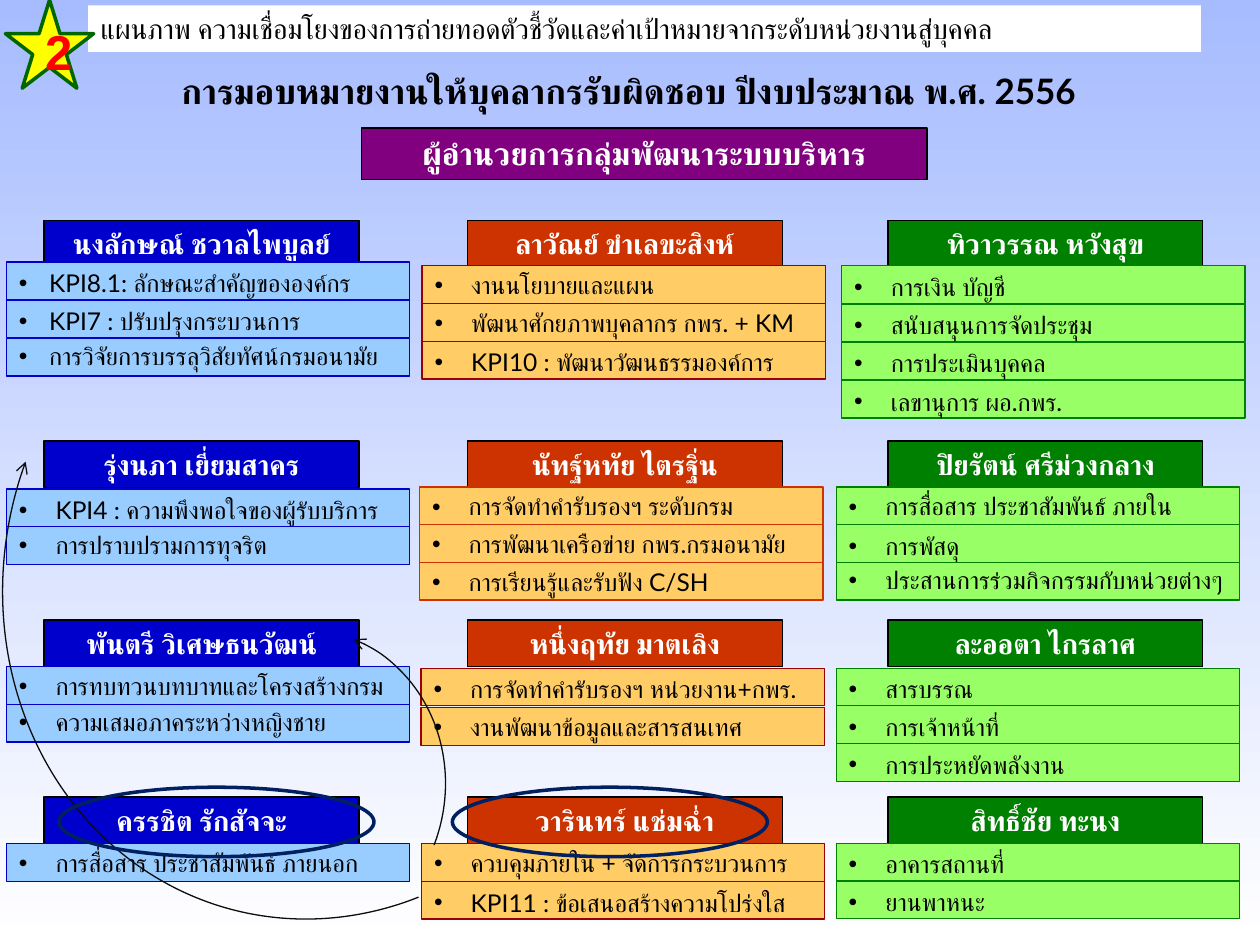
from lxml import etree
from pptx import Presentation
from pptx.dml.color import RGBColor as RGB
from pptx.enum.shapes import MSO_SHAPE as Kind
from pptx.enum.text import MSO_ANCHOR as Anchor, PP_ALIGN as Align
from pptx.oxml.ns import qn
from pptx.util import Cm, Pt

BLACK = RGB(0, 0, 0)
WHITE = RGB(255, 255, 255)
SKY = RGB(0xA7, 0xBC, 0xFF)
PURPLE = RGB(0x80, 0, 0x80)
BLUE = RGB(0, 0, 0xCC)
PALE = RGB(0x99, 0xCC, 0xFF)
RUST = RGB(0xCC, 0x33, 0)
WINE = RGB(0x99, 0, 0)
AMBER = RGB(0xFF, 0xCC, 0x66)
GREEN = RGB(0, 0x80, 0)
LIME = RGB(0x99, 0xFF, 0x66)
NAVY = RGB(0, 0x20, 0x60)
INK = RGB(0x0D, 0x0D, 0x0D)
YELLOW = RGB(255, 255, 0)
RED = RGB(255, 0, 0)
PINE = RGB(0, 0x66, 0)

prs = Presentation()
prs.slide_width, prs.slide_height = Cm(25.4), Cm(19.05)
slide = prs.slides.add_slide(prs.slide_layouts[6])
back = slide.background.fill
back.gradient()
back.gradient_angle = 270
for stop, tint in zip(back.gradient_stops, (SKY, WHITE)):
    stop.color.rgb = tint


def draw(kind, at, fill=None, line=None, width=0.75):
    shape = slide.shapes.add_shape(kind, *[Cm(v) for v in at])
    shape.shadow.inherit = False
    if fill is None:
        shape.fill.background()
    else:
        shape.fill.solid()
        shape.fill.fore_color.rgb = fill
    if line is None:
        shape.line.fill.background()
    else:
        shape.line.color.rgb = line
        shape.line.width = Pt(width)
    return shape


def write(shape, text, size, color, bold=True, face="Lato", align=Align.CENTER,
          wrap=True, anchor=Anchor.TOP, space=1.0):
    frame = shape.text_frame
    para = frame.paragraphs[0]
    run = para.add_run()
    run.text = text
    run.font.color.rgb = color
    looks = (
        (frame, {"word_wrap": wrap, "vertical_anchor": anchor}),
        (para, {"alignment": align, "line_spacing": space}),
        (run.font, {"name": face, "size": Pt(size), "bold": bold}),
    )
    for part, vals in looks:
        for key, val in vals.items():
            setattr(part, key, val)
    latin = run.font._element.find(qn("a:latin"))
    script = etree.Element(qn("a:cs"), typeface=face)
    latin.addnext(script)
    return para


title = slide.shapes.add_textbox(Cm(0.51), Cm(1.27), Cm(24.33), Cm(1.09))
write(title, "การมอบหมายงานให้บุคลากรรับผิดชอบ ปีงบประมาณ พ.ศ. 2556", 20, BLACK)
chief = draw(Kind.RECTANGLE, (7.29, 2.58, 11.4, 1.04), PURPLE, BLACK)
write(chief, "ผู้อำนวยการกลุ่มพัฒนาระบบบริหาร", 18, WHITE)

tops = (4.45, 8.89, 12.5, 16.07)
teams = (
    (0.89, BLUE, PALE, (
        ("นงลักษณ์ ชวาลไพบูลย์", 0.13, 5.28, 0.77, 0.61, BLUE, (
            ("KPI8.1: ลักษณะสำคัญขององค์กร", 1),
            ("KPI7 : ปรับปรุงกระบวนการ", 1),
            ("การวิจัยการบรรลุวิสัยทัศน์กรมอนามัย", 0.9))),
        ("รุ่งนภา เยี่ยมสาคร", 0.13, 9.86, 0.76, 0.74, BLUE, (
            ("KPI4 : ความพึงพอใจของผู้รับบริการ", 1),
            ("การปราบปรามการทุจริต", 0.9))),
        ("พันตรี วิเศษธนวัฒน์", 0.13, 13.44, 0.76, 0.74, BLUE, (
            ("การทบทวนบทบาทและโครงสร้างกรม", 0.95),
            ("ความเสมอภาคระหว่างหญิงชาย", 0.9))),
        ("ครรชิต รักสัจจะ", 0.13, 17.01, 0.76, 0.74, BLUE, (
            ("การสื่อสาร ประชาสัมพันธ์ ภายนอก", 0.95),)),
    )),
    (9.42, RUST, AMBER, (
        ("ลาวัณย์ ขำเลขะสิงห์", 8.51, 5.36, 0.76, 0.74, WINE, (
            ("งานนโยบายและแผน", 0.95),
            ("พัฒนาศักยภาพบุคลากร กพร. + KM", 0.95),
            ("KPI10 : พัฒนาวัฒนธรรมองค์การ", 1))),
        ("นัทฐ์หทัย ไตรฐิ่น", 8.46, 9.82, 0.76, 0.74, RUST, (
            ("การจัดทำคำรับรองฯ ระดับกรม", 0.95),
            ("การพัฒนาเครือข่าย กพร.กรมอนามัย", 0.95),
            ("การเรียนรู้และรับฟัง C/SH", 0.95))),
        ("หนึ่งฤทัย มาตเลิง", 8.49, 13.47, 0.8, 0.74, WINE, (
            ("การจัดทำคำรับรองฯ หน่วยงาน+กพร.", 1),
            ("งานพัฒนาข้อมูลและสารสนเทศ", 0.95))),
        ("วารินทร์ แช่มฉ่ำ", 8.5, 17.01, 0.76, 0.74, WINE, (
            ("ควบคุมภายใน + จัดการกระบวนการ", 0.95),
            ("KPI11 : ข้อเสนอสร้างความโปร่งใส", 1))),
    )),
    (17.9, GREEN, LIME, (
        ("ทิวาวรรณ หวังสุข", 16.97, 5.36, 0.77, 0.74, GREEN, (
            ("การเงิน บัญชี", 1),
            ("สนับสนุนการจัดประชุม", 1),
            ("การประเมินบุคคล", 1),
            ("เลขานุการ ผอ.กพร.", 1))),
        ("ปิยรัตน์ ศรีม่วงกลาง", 16.86, 9.82, 0.76, 0.74, GREEN, (
            ("การสื่อสาร ประชาสัมพันธ์ ภายใน", 0.95),
            ("การพัสดุ", 1),
            ("ประสานการร่วมกิจกรรมกับหน่วยต่างๆ", 0.9))),
        ("ละออตา ไกรลาศ", 16.86, 13.47, 0.76, 0.74, GREEN, (
            ("สารบรรณ", 1),
            ("การเจ้าหน้าที่", 1),
            ("การประหยัดพลังงาน", 1))),
        ("สิทธิ์ชัย ทะนง", 16.86, 17, 0.76, 0.74, GREEN, (
            ("อาคารสถานที่", 1),
            ("ยานพาหนะ", 1))),
    )),
)

for left, dark, light, cards in teams:
    for top, (name, x, y, step, inset, edge, tasks) in zip(tops, cards):
        head = draw(Kind.RECTANGLE, (left, top, 6.35, 0.94), dark, BLACK)
        write(head, name, 16, WHITE, wrap=False)
        for row, (task, space) in enumerate(tasks):
            cell = draw(Kind.RECTANGLE, (x, y + row * step, 8.13, 0.76), light, edge)
            para = write(cell, task, 14, BLACK, bold=False, align=Align.LEFT,
                         wrap=False, space=space)
            props = para._p.get_or_add_pPr()
            props.set("marL", str(Cm(inset)))
            props.set("indent", str(-Cm(inset)))
            etree.SubElement(props, qn("a:buFont"), typeface="Arial")
            etree.SubElement(props, qn("a:buChar"), char="•")

arcs = (
    ((0.1, 4.6, 12.75, 13.97), 195.9, (142.38, 3.02), "a:tailEnd"),
    ((3, 12.67, 5.97, 6.45), 12.3, (167.15, 6.1), "a:headEnd"),
)
for at, turn, ends, tip in arcs:
    arc = draw(Kind.ARC, at, line=INK)
    arc.rotation = turn
    for i, end in enumerate(ends):
        arc.adjustments[i] = end
    etree.SubElement(arc.line._get_or_add_ln(), qn(tip), type="arrow")

for x in (9.12, 1.19):
    draw(Kind.OVAL, (x, 15.87, 6.35, 1.4), line=NAVY, width=2)

banner = draw(Kind.RECTANGLE, (1.78, 0.11, 22.43, 0.94), WHITE)
write(banner, "แผนภาพ ความเชื่อมโยงของการถ่ายทอดตัวชี้วัดและค่าเป้าหมายจากระดับหน่วยงานสู่บุคคล",
      16, BLACK, bold=False, align=Align.LEFT)
star = draw(Kind.STAR_5_POINT, (0.11, 0, 1.78, 1.78), YELLOW, PINE, 2)
write(star, "2", 28, RED, face="Arial", anchor=Anchor.MIDDLE)

prs.save("out.pptx")
